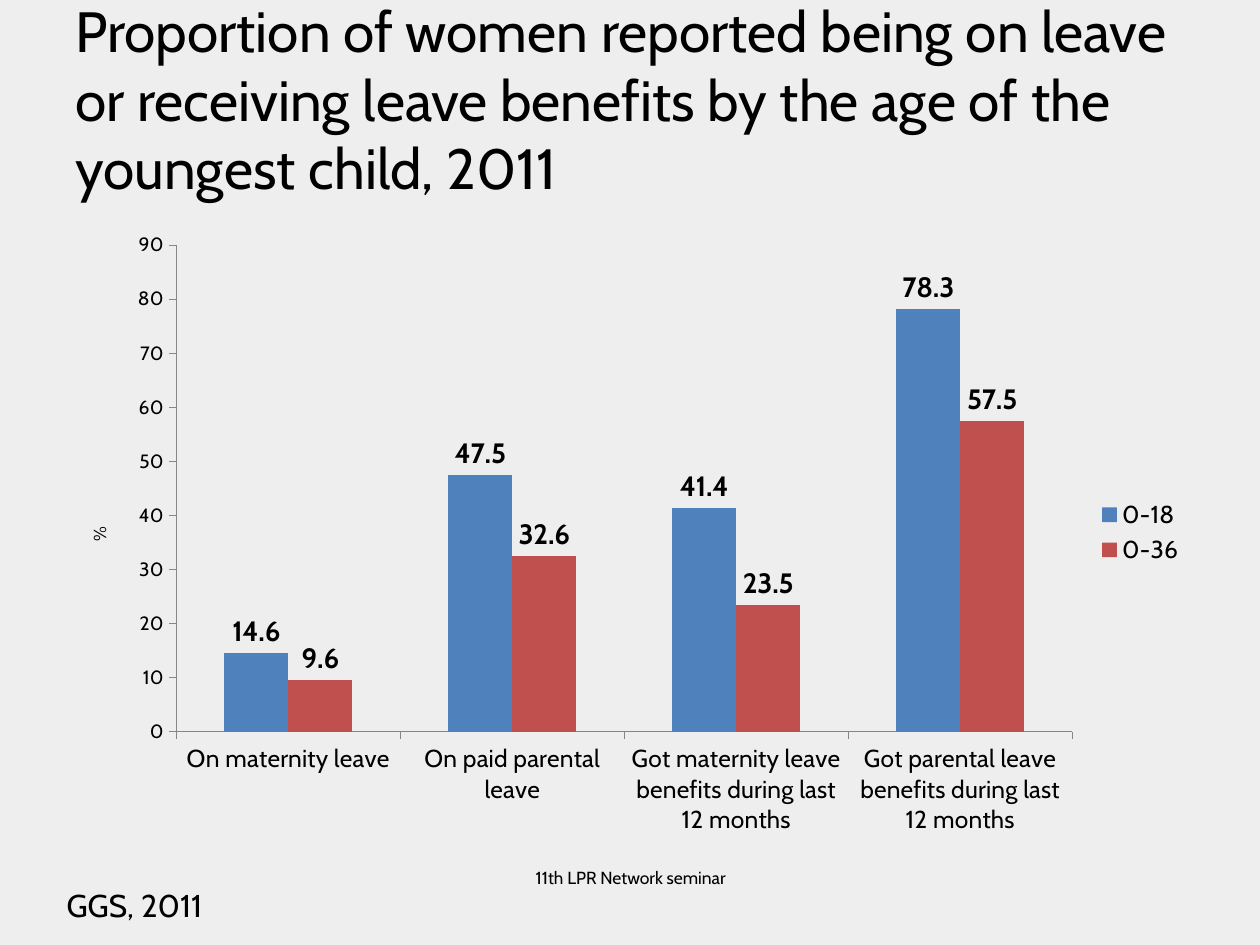
from lxml import etree
from pptx import Presentation
from pptx.chart.data import CategoryChartData
from pptx.dml.color import RGBColor
from pptx.enum.chart import XL_CHART_TYPE as ChartType, XL_LABEL_POSITION as LabelPosition
from pptx.enum.chart import XL_LEGEND_POSITION as LegendPosition, XL_TICK_MARK as TickMark
from pptx.enum.text import MSO_ANCHOR as Anchor, PP_ALIGN as Align
from pptx.oxml.ns import qn
from pptx.util import Inches, Pt

FONT = "Cabin"
BLACK = "000000"
AXIS_GREY = "868686"
LEAVE_TYPES = [
    "On maternity leave",
    "On paid parental leave",
    "Got maternity leave benefits during last 12 months",
    "Got parental leave benefits during last 12 months",
]
AGE_GROUPS = [
    ("0-18", [14.6, 47.5, 41.4, 78.3], "4F81BD"),
    ("0-36", [9.6, 32.6, 23.5, 57.5], "C0504D"),
]


def color(hex_value):
    return RGBColor.from_string(hex_value)


def style_font(font, size, bold=False):
    font.name = FONT
    font.size = Pt(size)
    font.bold = bold
    font.color.rgb = color(BLACK)


def add_text(slide, text, place, size, align=Align.LEFT, anchor=Anchor.TOP):
    frame = slide.shapes.add_textbox(*map(Inches, place)).text_frame
    frame.word_wrap = True
    frame.vertical_anchor = anchor
    frame.text = text
    paragraph = frame.paragraphs[0]
    paragraph.alignment = align
    style_font(paragraph.runs[0].font, size)


def style_axis(axis, size):
    axis.has_major_gridlines = False
    axis.major_tick_mark = TickMark.OUTSIDE
    axis.minor_tick_mark = TickMark.NONE
    axis.format.line.color.rgb = color(AXIS_GREY)
    style_font(axis.tick_labels.font, size)


def style_series(series, fill):
    series.format.fill.solid()
    series.format.fill.fore_color.rgb = color(fill)
    series.invert_if_negative = False
    labels = series.data_labels
    labels.show_value = True
    labels.number_format = "#,##0.0"
    labels.number_format_is_linked = False
    labels.position = LabelPosition.OUTSIDE_END
    style_font(labels.font, 16, bold=True)


def place_plot(chart, **fractions):
    plot_area = chart.plots[0]._element.getparent()
    for old_layout in plot_area.findall(qn("c:layout")):
        plot_area.remove(old_layout)
    layout = etree.Element(qn("c:layout"))
    manual = etree.SubElement(layout, qn("c:manualLayout"))
    settings = {"layoutTarget": "inner", "xMode": "edge", "yMode": "edge", **fractions}
    for name, value in settings.items():
        etree.SubElement(manual, qn(f"c:{name}")).set("val", str(value))
    plot_area.insert(0, layout)


def add_leave_chart(slide, place):
    data = CategoryChartData(number_format="General")
    data.categories = LEAVE_TYPES
    for age, shares, _ in AGE_GROUPS:
        data.add_series(age, shares)
    frame = slide.shapes.add_chart(ChartType.COLUMN_CLUSTERED, *map(Inches, place), data)
    chart = frame.chart
    chart.has_title = False
    style_font(chart.font, 10)

    columns = chart.plots[0]
    columns.gap_width = 150
    columns.overlap = 0
    columns.vary_by_categories = False
    for series, (_, _, fill) in zip(columns.series, AGE_GROUPS):
        style_series(series, fill)

    style_axis(chart.category_axis, 14)
    percent_axis = chart.value_axis
    style_axis(percent_axis, 11)
    percent_axis.minimum_scale = 0
    percent_axis.maximum_scale = 90
    percent_axis.major_unit = 10
    percent_title = percent_axis.axis_title.text_frame
    percent_title.text = "%"
    style_font(percent_title.paragraphs[0].runs[0].font, 10)

    chart.has_legend = True
    chart.legend.position = LegendPosition.RIGHT
    chart.legend.include_in_layout = False
    style_font(chart.legend.font, 14)
    place_plot(chart, x=0.1, y=0.04, w=0.79, h=0.78)


def main():
    deck = Presentation()
    deck.slide_width, deck.slide_height = Inches(10), Inches(7.5)
    slide = deck.slides.add_slide(deck.slide_layouts[6])
    slide.background.fill.solid()
    slide.background.fill.fore_color.rgb = color("EEEEEE")

    add_text(
        slide,
        "Proportion of women reported being on leave or receiving leave benefits "
        "by the age of the youngest child, 2011",
        (0.5, 0.39, 9, 1.25), 32.4, anchor=Anchor.BOTTOM,
    )
    add_leave_chart(slide, (0.5, 1.75, 9, 4.95))
    add_text(slide, "GGS, 2011", (0.43, 6.98, 1.97, 0.4), 18)
    add_text(slide, "11th LPR Network seminar", (3.42, 6.83, 3.17, 0.52), 10, Align.CENTER)
    deck.save("out.pptx")


if __name__ == "__main__":
    main()
